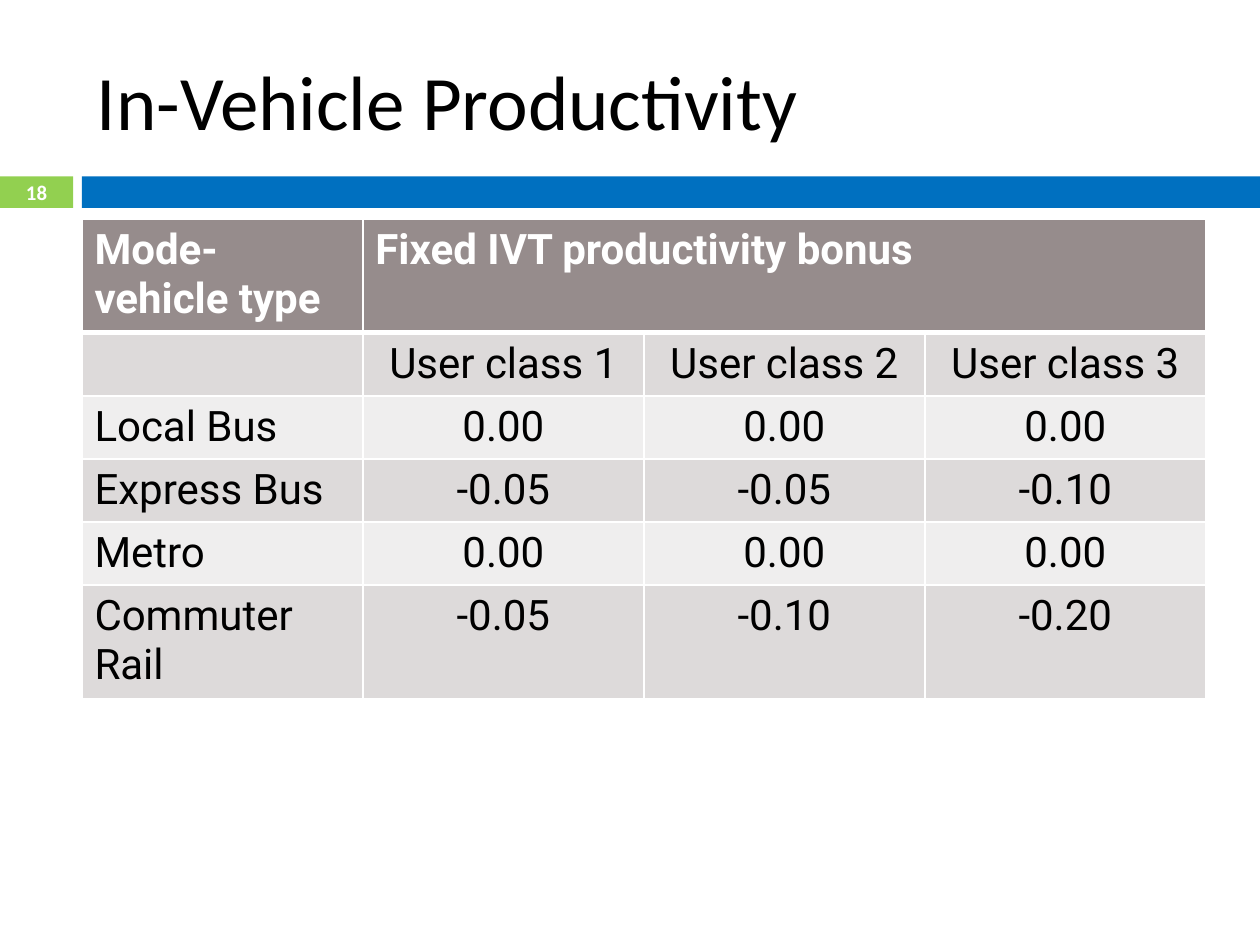
from dataclasses import dataclass

from lxml import etree
from pptx import Presentation
from pptx.dml.color import RGBColor
from pptx.enum.shapes import MSO_SHAPE
from pptx.enum.text import MSO_ANCHOR, PP_ALIGN
from pptx.oxml.ns import qn
from pptx.util import Inches, Pt

RECTANGLE = MSO_SHAPE.RECTANGLE
LEFT, CENTER = PP_ALIGN.LEFT, PP_ALIGN.CENTER
TOP, MIDDLE = MSO_ANCHOR.TOP, MSO_ANCHOR.MIDDLE


@dataclass(frozen=True)
class Theme:
    green: str = "92D050"
    blue: str = "0070C0"
    header: str = "968C8C"
    dark_band: str = "DDDADA"
    light_band: str = "EFEEEE"
    white: str = "FFFFFF"
    black: str = "000000"
    heading_font: str = "Calibri"
    table_font: str = "Roboto"
    title_size: float = 44
    number_size: float = 11.9
    table_size: float = 24
    thin_line: float = 1
    thick_line: float = 3


theme = Theme()


def write_text(frame, text, *, font, size, color, bold=False, align=LEFT, anchor=MIDDLE):
    frame.word_wrap = True
    frame.vertical_anchor = anchor
    paragraph = frame.paragraphs[0]
    paragraph.alignment = align
    if text:
        run = paragraph.add_run()
        run.text = text
        run.font.name = font
        run.font.size = Pt(size)
        run.font.bold = bold
        run.font.color.rgb = RGBColor.from_string(color)


def set_borders(cell, color, **widths):
    properties = cell._tc.get_or_add_tcPr()
    for side, width in widths.items():
        line = etree.SubElement(properties, qn(f"a:ln{side}"), w=str(Pt(width)))
        fill = etree.SubElement(line, qn("a:solidFill"))
        etree.SubElement(fill, qn("a:srgbClr"), val=color)


presentation = Presentation()
presentation.slide_width, presentation.slide_height = Inches(10), Inches(7.5)
slide = presentation.slides.add_slide(presentation.slide_layouts[6])

# Page grid
content_left, content_width = Inches(0.65), Inches(8.92)
band_top, band_height = Inches(1.4), Inches(0.25)
number_width = Inches(0.58)

# Number block and title rule
for left, width, color in (
    (0, number_width, theme.green),
    (content_left, presentation.slide_width - content_left, theme.blue),
):
    band = slide.shapes.add_shape(RECTANGLE, left, band_top, width, band_height)
    band.shadow.inherit = False
    band.fill.solid()
    band.fill.fore_color.rgb = RGBColor.from_string(color)
    band.line.fill.background()

# Title
title = slide.shapes.add_textbox(Inches(0.67), Inches(0.25), content_width, Inches(1.08))
write_text(title.text_frame, "In-Vehicle Productivity", font=theme.heading_font,
           size=theme.title_size, color=theme.black)

# Slide number
number = slide.shapes.add_textbox(0, band_top, number_width, band_height)
number.text_frame.margin_top = number.text_frame.margin_bottom = 0
write_text(number.text_frame, "18", font=theme.heading_font, size=theme.number_size,
           color=theme.white, bold=True, align=CENTER)

# Productivity table
bonus_rows = [
    ["Mode-vehicle type", "Fixed IVT productivity bonus", "", ""],
    ["", "User class 1", "User class 2", "User class 3"],
    ["Local Bus", "0.00", "0.00", "0.00"],
    ["Express Bus", "-0.05", "-0.05", "-0.10"],
    ["Metro", "0.00", "0.00", "0.00"],
    ["Commuter Rail", "-0.05", "-0.10", "-0.20"],
]
one_line, two_lines = Inches(0.49), Inches(0.88)
row_heights = [two_lines] + [one_line] * 4 + [two_lines]
table = slide.shapes.add_table(len(bonus_rows), len(bonus_rows[0]), content_left,
                               Inches(1.74), content_width, sum(row_heights)).table
table.cell(0, 1).merge(table.cell(0, 3))

for row, texts in enumerate(bonus_rows):
    table.rows[row].height = row_heights[row]
    is_header = row == 0
    band_color = theme.dark_band if row % 2 else theme.light_band
    for column, text in enumerate(texts):
        cell = table.cell(row, column)
        set_borders(cell, theme.white, L=theme.thin_line, R=theme.thin_line,
                    T=theme.thick_line if row == 1 else theme.thin_line,
                    B=theme.thick_line if is_header else theme.thin_line)
        cell.fill.solid()
        cell.fill.fore_color.rgb = RGBColor.from_string(
            theme.header if is_header else band_color)
        write_text(cell.text_frame, text, font=theme.table_font, size=theme.table_size,
                   color=theme.white if is_header else theme.black, bold=is_header,
                   align=LEFT if is_header or column == 0 else CENTER, anchor=TOP)

presentation.save("out.pptx")
